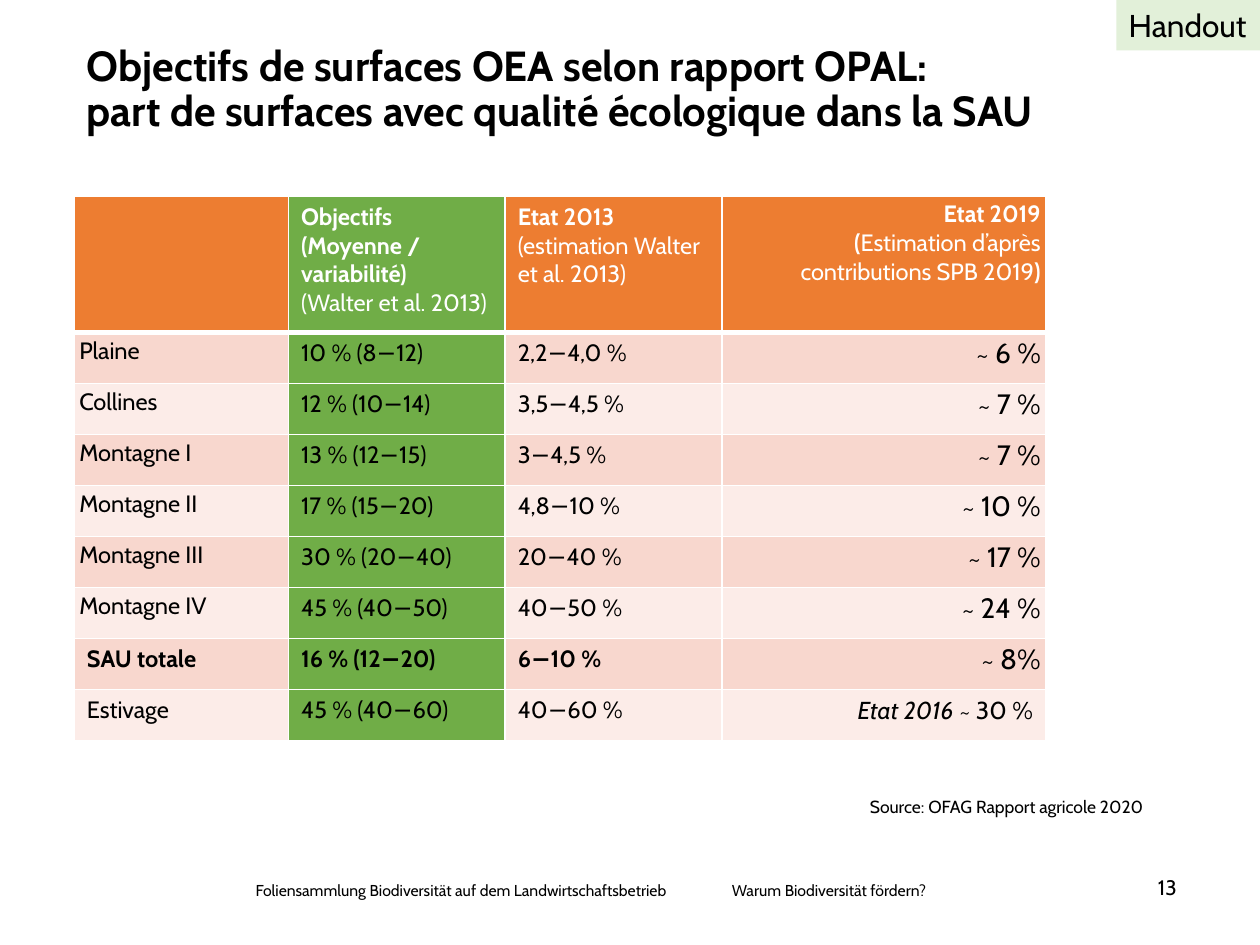
from lxml import etree
from pptx import Presentation
from pptx.dml.color import RGBColor
from pptx.enum.shapes import MSO_SHAPE
from pptx.enum.text import MSO_ANCHOR, MSO_AUTO_SIZE, PP_ALIGN
from pptx.oxml.ns import qn
from pptx.util import Inches, Pt

LEFT, RIGHT = PP_ALIGN.LEFT, PP_ALIGN.RIGHT
TOP, BOTTOM = MSO_ANCHOR.TOP, MSO_ANCHOR.BOTTOM
RECTANGLE = MSO_SHAPE.RECTANGLE
NO_AUTOFIT = MSO_AUTO_SIZE.NONE

FONT = "Cabin"
COLORS = {
    "text": "000000",
    "white": "FFFFFF",
    "header": "ED7D31",
    "target": "70AD47",
    "odd_row": "F8D7CE",
    "even_row": "FCECE8",
    "handout": "E2F0D9",
}

TITLE = ("Objectifs de surfaces OEA selon rapport OPAL: \n"
         "part de surfaces avec qualité écologique dans la SAU")
COLUMN_WIDTHS = (1.7, 1.72, 1.72, 2.57)
HEADER_HEIGHT = 1.08
BODY_HEIGHT = 3.24
TABLE_SIZE = 13.5
TIGHT = (0.04, 0.03)
NORMAL = (0.1, 0.05)

# Each header is a list of paragraphs, each a list of (text, bold) runs.
HEADERS = [
    [],
    [[("Objectifs", True)],
     [("(Moyenne /\nvariabilité)", True)],
     [("(Walter et al. 2013)", False)]],
    [[("Etat 2013", True)],
     [("(estimation Walter et al. 2013)", False)]],
    [[("Etat 2019\n(", True),
      ("Estimation d’après contributions SPB 2019", False),
      (")", True)]],
]
ROWS = [
    ("Plaine", "10 % (8−12)", "2,2−4,0 %", "~ 6 %"),
    ("Collines", "12 % (10−14)", "3,5−4,5 %", "~ 7 %"),
    ("Montagne I", "13 % (12−15)", "3−4,5 %", "~ 7 %"),
    ("Montagne II", "17 % (15−20)", "4,8−10 %", "~ 10 %"),
    ("Montagne III", "30 % (20−40)", "20−40 %", "~ 17 %"),
    ("Montagne IV", "45 % (40−50)", "40−50 %", "~ 24 %"),
    ("SAU totale", "16 % (12−20)", "6−10 %", "~ 8%"),
    ("Estivage", "45 % (40−60)", "40−60 %", "~ 30 %"),
]
TOTAL_ROW, SUMMER_ROW = 7, 8


def color(name):
    return RGBColor.from_string(COLORS[name])


def style_font(font, size, color_name="text", bold=False, italic=False):
    font.name = FONT
    font.size = Pt(size)
    font.color.rgb = color(color_name)
    font.bold = bold
    font.italic = italic


def add_run(paragraph, text, size, color_name="text", bold=False, italic=False):
    """Append styled text, turning each newline into a line break."""
    for index, line in enumerate(text.split("\n")):
        if index:
            paragraph.add_line_break()
        run = paragraph.add_run()
        run.text = line
        style_font(run.font, size, color_name, bold, italic)


def set_text(text_frame, text, size, alignment=LEFT, bold=False):
    text_frame.word_wrap = True
    text_frame.text = text
    paragraph = text_frame.paragraphs[0]
    paragraph.alignment = alignment
    for run in paragraph.runs:
        style_font(run.font, size, bold=bold)


def add_title(slide):
    title = slide.shapes.title
    title.left, title.top = Inches(0.69), Inches(0.36)
    title.width, title.height = Inches(8.65), Inches(0.69)
    frame = title.text_frame
    frame.auto_size = NO_AUTOFIT
    frame.vertical_anchor = TOP
    frame.margin_left = frame.margin_right = 0
    frame.margin_top = frame.margin_bottom = 0
    set_text(frame, TITLE.replace("\n", "\v"), 24, bold=True)
    frame.paragraphs[0].line_spacing = 0.9


def add_label(slide, box, text, size, alignment=LEFT):
    label = slide.shapes.add_textbox(*map(Inches, box))
    set_text(label.text_frame, text, size, alignment)
    return label


def add_handout_tag(slide):
    tag = slide.shapes.add_shape(RECTANGLE, *map(Inches, (8.86, 0, 1.14, 0.4)))
    tag.shadow.inherit = False
    tag.fill.solid()
    tag.fill.fore_color.rgb = color("handout")
    tag.line.fill.background()
    tag.text_frame.vertical_anchor = TOP
    set_text(tag.text_frame, "Handout", 18)


def add_slide_number(slide):
    label = add_label(slide, (8.47, 6.8, 0.87, 0.39), "13", 12, RIGHT)
    label.text_frame.margin_left = label.text_frame.margin_right = 0
    label.text_frame.vertical_anchor = BOTTOM


def set_borders(cell, top=1, bottom=1):
    properties = cell._tc.get_or_add_tcPr()
    for tag, width in (("lnL", 1), ("lnR", 1), ("lnT", top), ("lnB", bottom)):
        line = etree.SubElement(properties, qn(f"a:{tag}"), w=str(Pt(width)))
        fill = etree.SubElement(line, qn("a:solidFill"))
        etree.SubElement(fill, qn("a:srgbClr"), val=COLORS["white"])


def format_cell(cell, fill_name, margins, top=1, bottom=1):
    set_borders(cell, top, bottom)
    cell.fill.solid()
    cell.fill.fore_color.rgb = color(fill_name)
    cell.margin_left = cell.margin_right = Inches(margins[0])
    cell.margin_top = cell.margin_bottom = Inches(margins[1])


def fill_header(table):
    last = len(HEADERS) - 1
    for column, paragraphs in enumerate(HEADERS):
        cell = table.cell(0, column)
        format_cell(cell, "target" if column == 1 else "header",
                    TIGHT if column == last else NORMAL, bottom=3)
        for index, runs in enumerate(paragraphs):
            frame = cell.text_frame
            paragraph = frame.add_paragraph() if index else frame.paragraphs[0]
            paragraph.alignment = RIGHT if column == last else LEFT
            for text, bold in runs:
                add_run(paragraph, text, TABLE_SIZE, "white", bold)


def fill_body_row(table, row, values):
    band = "odd_row" if row % 2 else "even_row"
    last = len(values) - 1
    for column, value in enumerate(values):
        cell = table.cell(row, column)
        is_tight = (column == 0 and row < TOTAL_ROW
                    or column == last and row != SUMMER_ROW)
        format_cell(cell, "target" if column == 1 else band,
                    TIGHT if is_tight else NORMAL, top=3 if row == 1 else 1)
        paragraph = cell.text_frame.paragraphs[0]
        if column < last:
            add_run(paragraph, value, TABLE_SIZE, bold=row == TOTAL_ROW)
            continue
        paragraph.alignment = RIGHT
        if row == SUMMER_ROW:
            add_run(paragraph, "Etat 2016 ", 14, italic=True)
        add_run(paragraph, value, 14 if row == SUMMER_ROW else 16)


def add_targets_table(slide):
    box = (0.59, 1.56, sum(COLUMN_WIDTHS), HEADER_HEIGHT + BODY_HEIGHT)
    frame = slide.shapes.add_table(len(ROWS) + 1, len(COLUMN_WIDTHS),
                                   *map(Inches, box))
    table = frame.table
    for column, width in zip(table.columns, COLUMN_WIDTHS):
        column.width = Inches(width)
    for index, row in enumerate(table.rows):
        row.height = Inches(BODY_HEIGHT / len(ROWS) if index else HEADER_HEIGHT)
    fill_header(table)
    for row, values in enumerate(ROWS, start=1):
        fill_body_row(table, row, values)


def main():
    presentation = Presentation()
    presentation.slide_width, presentation.slide_height = Inches(10), Inches(7.5)
    slide = presentation.slides.add_slide(presentation.slide_layouts[5])
    add_title(slide)
    add_targets_table(slide)
    add_label(slide, (1.93, 6.94, 3.46, 0.25),
              "Foliensammlung Biodiversität auf dem Landwirtschaftsbetrieb", 9)
    add_label(slide, (5.71, 6.94, 2.28, 0.25), "Warum Biodiversität fördern?", 9)
    add_slide_number(slide)
    add_label(slide, (5.31, 6.27, 3.86, 0.27),
              "Source: OFAG Rapport agricole 2020", 10, RIGHT)
    add_handout_tag(slide)
    presentation.save("out.pptx")


if __name__ == "__main__":
    main()
